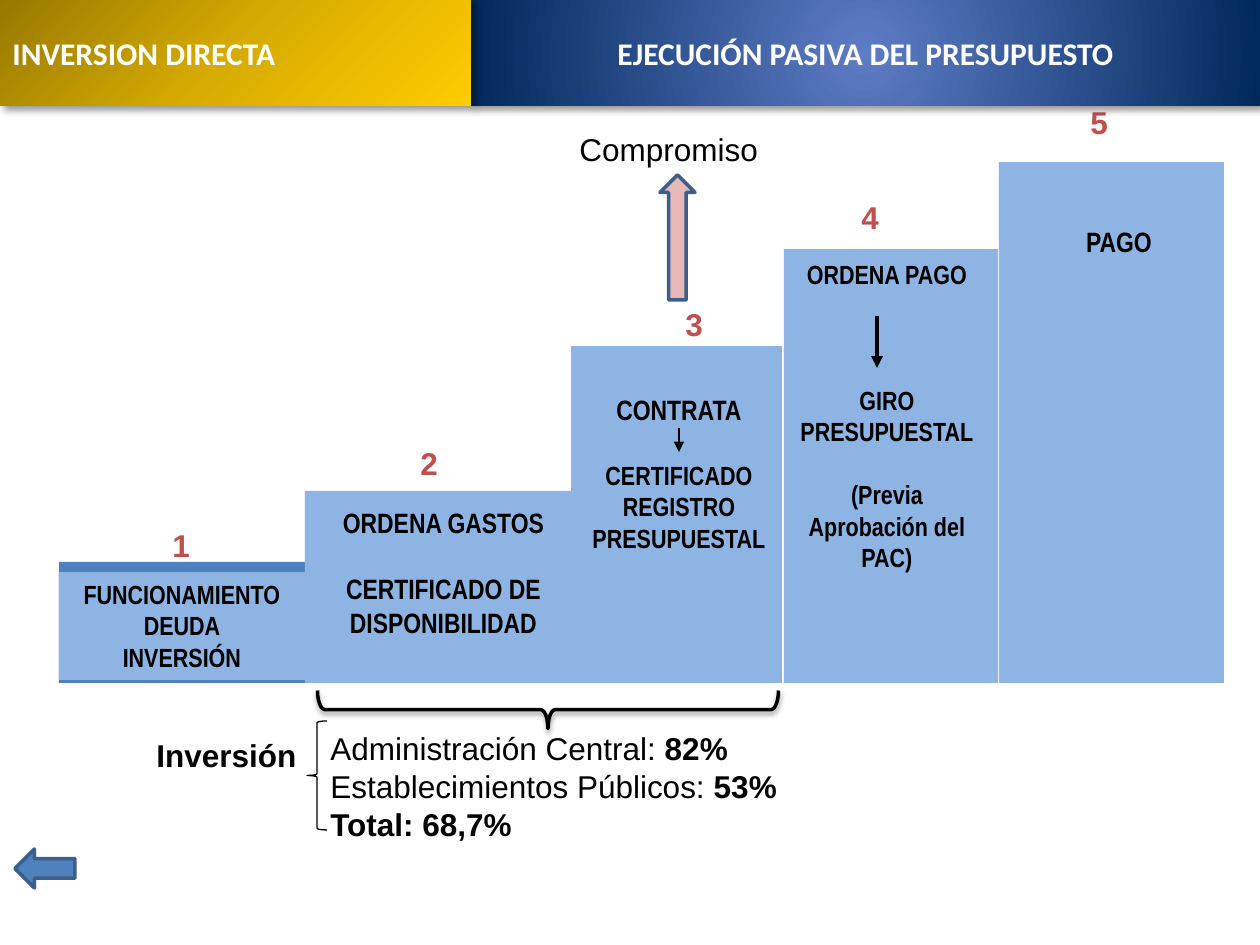
from lxml import etree
from pptx import Presentation
from pptx.dml.color import RGBColor
from pptx.enum.shapes import MSO_CONNECTOR, MSO_SHAPE
from pptx.enum.text import MSO_ANCHOR, PP_ALIGN
from pptx.oxml import parse_xml
from pptx.oxml.ns import nsdecls, qn
from pptx.util import Emu, Pt

RECT, LEFT_BRACE = MSO_SHAPE.RECTANGLE, MSO_SHAPE.LEFT_BRACE
UP_ARROW, LEFT_ARROW = MSO_SHAPE.UP_ARROW, MSO_SHAPE.LEFT_ARROW
STRAIGHT = MSO_CONNECTOR.STRAIGHT
LEFT, CENTER = PP_ALIGN.LEFT, PP_ALIGN.CENTER
PX = 914400 / 126
COLORS = {
    "black": "000000", "white": "FFFFFF", "step": "8EB4E3", "blue": "4F81BD",
    "number": "C0504D", "pink": "E6B9B8", "outline": "3A5F8C",
}


def add_shape(kind, box, fill=None, line=None, width=1, shadow=None):
    """Add a preset shape; shadow is (alpha %, blur pt, distance pt, angle)."""
    s = slide.shapes.add_shape(kind, *[Emu(round(v * PX)) for v in box])
    s.shadow.inherit = False
    if fill:
        s.fill.solid()
        s.fill.fore_color.rgb = RGBColor.from_string(COLORS[fill])
    else:
        s.fill.background()
    if line:
        s.line.color.rgb = RGBColor.from_string(COLORS[line])
        s.line.width = Pt(width)
    else:
        s.line.fill.background()
    if shadow:
        alpha, blur, dist, angle = shadow
        s._element.spPr.find(qn("a:effectLst")).append(parse_xml(
            f'<a:outerShdw {nsdecls("a")} blurRad="{Pt(blur)}" dist="{Pt(dist)}" '
            f'dir="{angle * 60000}" algn="t" rotWithShape="0"><a:srgbClr val="{COLORS["black"]}">'
            f'<a:alpha val="{alpha * 1000}"/></a:srgbClr></a:outerShdw>'))
    return s


def add_text(box, lines, font="Arial", color="black", bold=True, align=LEFT, wrap=True, s=None):
    """Write lines of (text, size, space before) into shape s or a new text box."""
    if s is None:
        s = slide.shapes.add_textbox(*[Emu(round(v * PX)) for v in box])
    tf = s.text_frame
    tf.word_wrap = wrap
    for i, (text, size, gap) in enumerate(lines):
        p = tf.paragraphs[0] if i == 0 else tf.add_paragraph()
        p.text = text
        p.alignment = align
        if gap:
            p.space_before = Pt(gap)
        p.font.name, p.font.size, p.font.bold = font, Pt(size), bold
        p.font.color.rgb = RGBColor.from_string(COLORS[color])
    return tf


prs = Presentation()
prs.slide_width, prs.slide_height = Emu(round(1260 * PX)), Emu(round(945 * PX))
slide = prs.slides.add_slide(prs.slide_layouts[6])

# Investment shares
add_text((144, 730, 166, 50), [("Inversión", 18, 0)], wrap=False)
tf = add_text((318, 723, 494, 127), [
    ("Administración Central: ", 18, 0), ("Establecimientos Públicos: ", 18, 0),
    ("Total: ", 18, 0)], bold=False, wrap=False)
for p, value in zip(tf.paragraphs, ("82%", "53%", "68,7%")):
    r = p.add_run()
    r.text = value
    r.font.bold = True
tf.paragraphs[2].font.bold = True
add_shape(LEFT_BRACE, (307, 721, 20, 109), line="black", width=0.75)

# Staircase: left, top and width of each step, all on one base line
BASE = 683
steps = [(59, 562, 246, "blue"), (305, 491, 266, "step"), (571, 346, 211, "step"),
         (784, 249, 214, "step"), (999, 162, 225, "step")]
for left, top, width, fill in steps:
    add_shape(RECT, (left, top, width, BASE - top), fill)
funding = add_shape(RECT, (59, 572, 246, 108), "step")
funding.text_frame.vertical_anchor = MSO_ANCHOR.TOP

step_texts = [
    (None, funding, [("FUNCIONAMIENTO", 15, 0), ("DEUDA", 15, 0), ("INVERSIÓN", 15, 0)]),
    ((317, 499, 253, 159), None, [
        ("ORDENA GASTOS", 16, 0), ("CERTIFICADO DE", 16, 19), ("DISPONIBILIDAD", 16, 0)]),
    ((573, 386, 212, 264), None, [
        ("CONTRATA", 16, 0), ("CERTIFICADO", 15, 19), ("REGISTRO", 15, 0),
        ("PRESUPUESTAL", 15, 0)]),
    ((785, 252, 204, 330), None, [
        ("ORDENA PAGO", 15, 0), ("GIRO", 15, 54), ("PRESUPUESTAL", 15, 0),
        ("(Previa Aprobación del PAC)", 15, 18)]),
    ((1020, 218, 198, 49), None, [("PAGO", 16, 0)]),
]
for box, shape, lines in step_texts:
    add_text(box, lines, font="Arial Narrow", align=CENTER, s=shape)

numbers = [(160, 520), (408, 438), (673, 299), (849, 192), (1078, 97)]
for n, (x, y) in enumerate(numbers, 1):
    add_text((x, y, 46, 54), [(str(n), 18, 0)], color="number", wrap=False)

for x, top, bottom, width in [(679, 428, 452, 1), (877, 316, 368, 2.25)]:
    c = slide.shapes.add_connector(
        STRAIGHT, *[Emu(round(v * PX)) for v in (x, top, x, bottom)])
    c.line.color.rgb = RGBColor.from_string(COLORS["black"])
    c.line.width = Pt(width)
    etree.SubElement(c.line._get_or_add_ln(), qn("a:tailEnd"), type="triangle")
    etree.SubElement(c._element.spPr, qn("a:effectLst"))

# Commitment arrow, lower brace and back arrow
add_text((567, 124, 212, 50), [("Compromiso", 18, 0)], bold=False)
add_shape(UP_ARROW, (660, 175, 35, 125), "pink", "outline", 2)
brace = add_shape(LEFT_BRACE, (529, 479, 38, 461), line="black", width=2,
                  shadow=(38, 3.1, 1.6, 90))
brace.rotation = 270
brace.adjustments[0] = 0.195
add_shape(LEFT_ARROW, (15, 849, 60, 39), "blue", "outline", 2)

# Header bands with radial gradients; focus is left, top, right, bottom in %
headers = [
    ((471, 0, 789, 106), "EJECUCIÓN PASIVA DEL PRESUPUESTO", CENTER,
     [(0, "5E7CC5"), (100, "00295C")], (50, 50, 50, 50)),
    ((0, 0, 471, 106), "INVERSION DIRECTA", LEFT,
     [(0, "977900"), (50, "D7AC00"), (100, "FFCC00")], (0, 0, 100, 100)),
]
for box, title, align, stops, focus in headers:
    s = add_shape(RECT, box, shadow=(40, 4, 3, 45))
    s.text_frame.vertical_anchor = MSO_ANCHOR.MIDDLE
    add_text(box, [(title, 18, 0)], "Calibri", "white", align=align, s=s)
    stop_xml = "".join(f'<a:gs pos="{pos * 1000}"><a:srgbClr val="{color}"/></a:gs>'
                       for pos, color in stops)
    sides = " ".join(f'{side}="{v * 1000}"' for side, v in zip("ltrb", focus))
    spPr = s._element.spPr
    spPr.replace(spPr.find(qn("a:noFill")), parse_xml(
        f'<a:gradFill {nsdecls("a")} rotWithShape="1"><a:gsLst>{stop_xml}</a:gsLst>'
        f'<a:path path="circle"><a:fillToRect {sides}/></a:path></a:gradFill>'))

prs.save("out.pptx")
